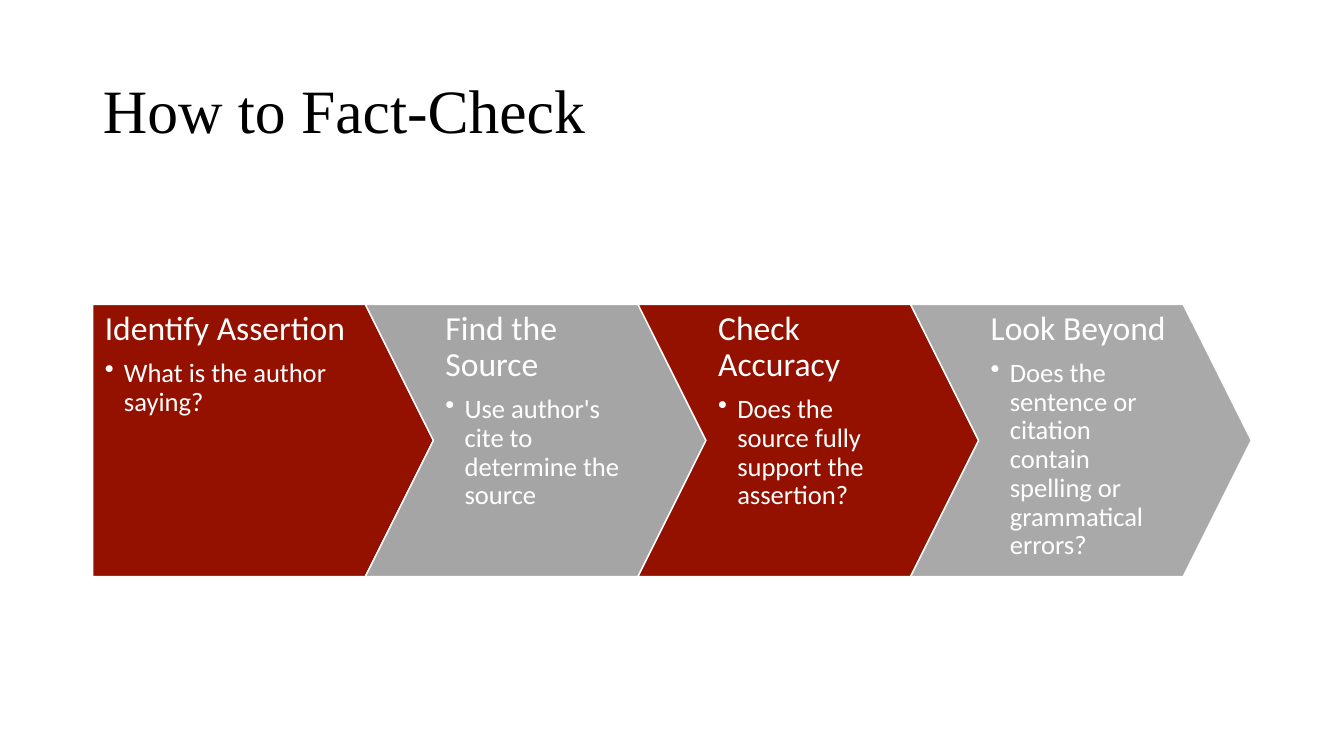
"""Build the slide "How to Fact-Check" with four process arrows."""
import dataclasses

import lxml.etree
import pptx
import pptx.dml.color
import pptx.enum.shapes
import pptx.enum.text
import pptx.oxml.ns
import pptx.presentation
import pptx.shapes.group
import pptx.slide
import pptx.text.text
import pptx.util

EMU_PER_PX = 4572
SLIDE_WIDTH, SLIDE_HEIGHT = 2667, 1500
ARROW_LEFT, ARROW_TOP = 184, 604
ARROW_WIDTH, ARROW_HEIGHT = 676, 540
ARROW_PITCH = 541
NOTCH = ARROW_HEIGHT // 4
INSET_SIDE, INSET_TOP = 24, 14
BULLET_INDENT = 38
WHITE, BLACK, RED = "FFFFFF", "000000", "941100"
GREY, LIGHT_GREY = "A5A5A5", "A9A9A9"
MSO_SHAPE = pptx.enum.shapes.MSO_SHAPE


@dataclasses.dataclass(frozen=True)
class Step:
    heading: str
    detail: str
    fill: str
    outline: MSO_SHAPE = MSO_SHAPE.CHEVRON


STEPS = [
    Step("Identify Assertion", "What is the author saying?", RED, MSO_SHAPE.PENTAGON),
    Step("Find the Source", "Use author's cite to determine the source", GREY),
    Step("Check Accuracy", "Does the source fully support the assertion?", RED),
    Step(
        "Look Beyond",
        "Does the sentence or citation contain spelling or grammatical errors?",
        LIGHT_GREY,
    ),
]


def px(length: int) -> pptx.util.Emu:
    return pptx.util.Emu(length * EMU_PER_PX)


def color(value: str) -> pptx.dml.color.RGBColor:
    return pptx.dml.color.RGBColor.from_string(value)


def write(
    paragraph: pptx.text.text._Paragraph, text: str, font: str, size: int, fill: str
) -> None:
    paragraph.text = text
    paragraph.alignment = pptx.enum.text.PP_ALIGN.LEFT
    paragraph.line_spacing = 0.9
    for run in paragraph.runs:
        run.font.name = font
        run.font.size = pptx.util.Pt(size)
        run.font.color.rgb = color(fill)


def add_bullet(paragraph: pptx.text.text._Paragraph) -> None:
    paragraph.level = 1
    properties = paragraph._p.get_or_add_pPr()
    properties.set("marL", str(px(BULLET_INDENT)))
    properties.set("indent", str(px(-BULLET_INDENT)))
    bullet = lxml.etree.SubElement(properties, pptx.oxml.ns.qn("a:buChar"))
    bullet.set("char", "•")


def add_arrow(group: pptx.shapes.group.GroupShape, step: Step, left: int) -> None:
    arrow = group.shapes.add_shape(
        step.outline, px(left), px(ARROW_TOP), px(ARROW_WIDTH), px(ARROW_HEIGHT)
    )
    arrow.adjustments[0] = 0.25
    arrow.shadow.inherit = False
    arrow.fill.solid()
    arrow.fill.fore_color.rgb = color(step.fill)
    arrow.line.color.rgb = color(WHITE)
    arrow.line.width = pptx.util.Pt(1)


def add_step_text(group: pptx.shapes.group.GroupShape, step: Step, left: int) -> None:
    is_first = step.outline == MSO_SHAPE.PENTAGON
    text_left = left if is_first else left + NOTCH
    text_width = ARROW_WIDTH - (NOTCH // 2 if is_first else 2 * NOTCH)
    box = group.shapes.add_textbox(
        px(text_left), px(ARROW_TOP), px(text_width), px(ARROW_HEIGHT)
    )
    frame = box.text_frame
    frame.word_wrap = True
    frame.margin_left = px(INSET_SIDE)
    frame.margin_right = px(INSET_SIDE + NOTCH // 2 if is_first else INSET_SIDE)
    frame.margin_top = frame.margin_bottom = px(INSET_TOP)
    heading = frame.paragraphs[0]
    write(heading, step.heading, "Calibri", 24, WHITE)
    heading.space_after = pptx.util.Pt(8.4)
    detail = frame.add_paragraph()
    write(detail, step.detail, "Calibri", 19, WHITE)
    add_bullet(detail)


def add_title(slide: pptx.slide.Slide) -> None:
    title = slide.shapes.title
    title.left, title.top = px(184), px(80)
    title.width, title.height = px(2300), px(290)
    frame = title.text_frame
    frame.auto_size = pptx.enum.text.MSO_AUTO_SIZE.NONE
    frame.vertical_anchor = pptx.enum.text.MSO_ANCHOR.MIDDLE
    write(frame.paragraphs[0], "How to Fact-Check", "Times New Roman", 44, BLACK)


def main() -> None:
    presentation = pptx.Presentation()
    presentation.slide_width = px(SLIDE_WIDTH)
    presentation.slide_height = px(SLIDE_HEIGHT)
    slide = presentation.slides.add_slide(presentation.slide_layouts[5])
    add_title(slide)
    process = slide.shapes.add_group_shape()
    for index, step in enumerate(STEPS):
        left = ARROW_LEFT + index * ARROW_PITCH
        add_arrow(process, step, left)
        add_step_text(process, step, left)
    presentation.save("out.pptx")


if __name__ == "__main__":
    main()
